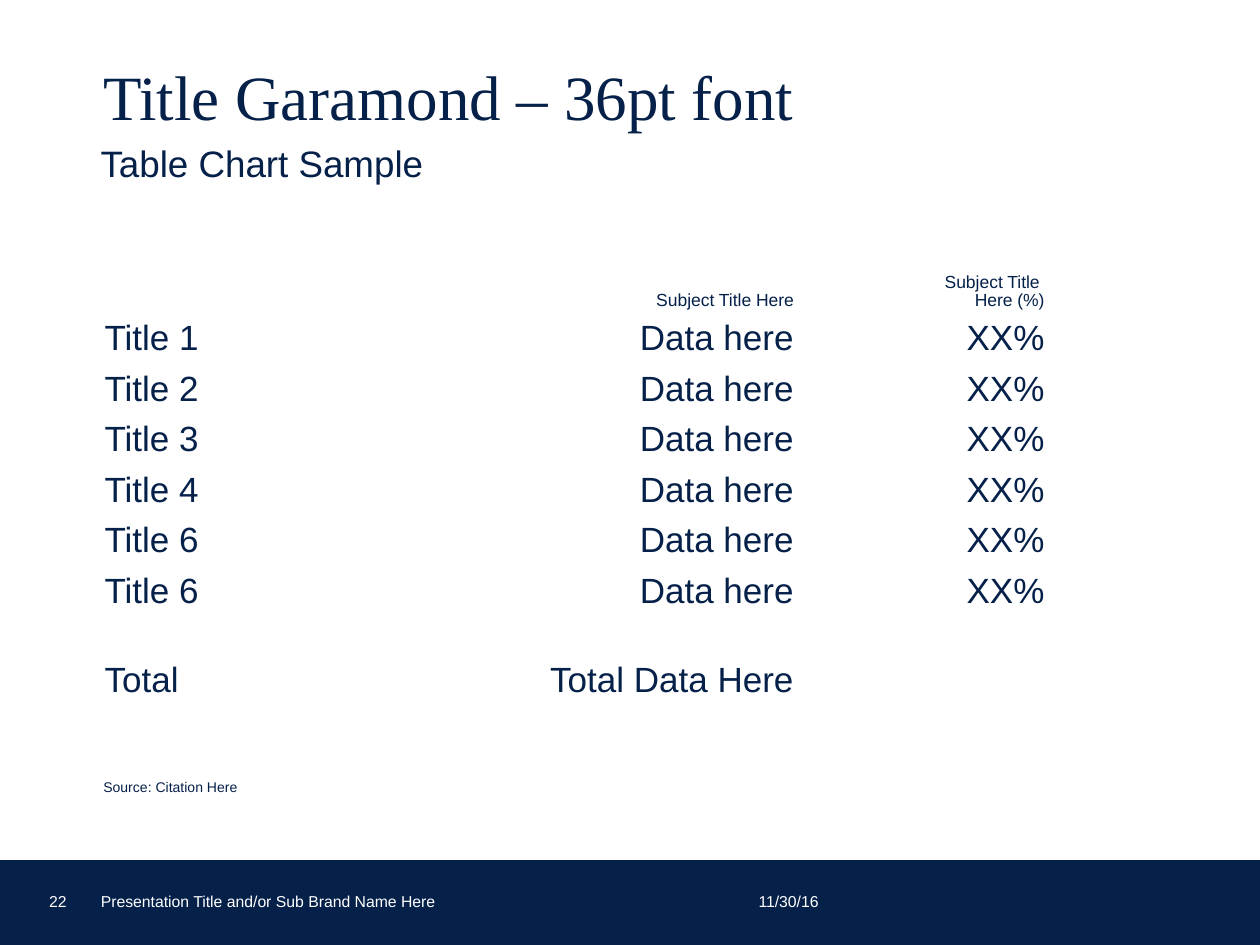
from pptx import Presentation
from pptx.dml.color import RGBColor
from pptx.enum.shapes import MSO_SHAPE
from pptx.enum.text import MSO_ANCHOR, PP_ALIGN
from pptx.util import Inches, Pt

THEME = {
    "navy": RGBColor(0x05, 0x20, 0x49),
    "white": RGBColor(0xFF, 0xFF, 0xFF),
    "serif": "Times New Roman",
    "sans": "Arial",
    "title": 36, "subtitle": 21, "body": 20, "header": 10, "footer": 9, "source": 8,
}

TITLE = "Title Garamond – 36pt font"
SUBTITLE = "Table Chart Sample"
SOURCE = "Source: Citation Here"
FOOTER = [  # text, left, top, width, height
    ("Presentation Title and/or Sub Brand Name Here", 0.8, 7.08, 4.71, 0.15),
    ("22", 0.39, 7.06, 0.27, 0.17),
    ("11/30/16", 6.02, 7.06, 1.01, 0.17),
]

HEADER = ("", "Subject Title Here", "Subject Title \vHere (%)")
ROW_TITLES = ["Title 1", "Title 2", "Title 3", "Title 4", "Title 6", "Title 6"]
TOTAL = ("Total", "Total Data Here", "")
ROWS = [HEADER, *((name, "Data here", "XX%") for name in ROW_TITLES), TOTAL]
COL_WIDTHS = (3.03, 2.64, 1.99)
ROW_HEIGHT, TOTAL_HEIGHT = 0.38, 0.69
CELL_MARGIN, TOTAL_MARGIN = 0.05, 0.36


def format_text(tf, size, color="navy", font="sans", spacing=0.9, align=PP_ALIGN.LEFT):
    for p in tf.paragraphs:
        p.alignment = align
        p.line_spacing = spacing
        p.font.size = Pt(THEME[size])
        for r in p.runs:
            r.font.name = THEME[font]
            r.font.size = Pt(THEME[size])
            r.font.color.rgb = THEME[color]


def add_text(slide, text, box, size, anchor=MSO_ANCHOR.TOP, inset=True, **style):
    tf = slide.shapes.add_textbox(*map(Inches, box)).text_frame
    tf.word_wrap = True
    tf.vertical_anchor = anchor
    if not inset:
        tf.margin_left = tf.margin_right = tf.margin_top = tf.margin_bottom = 0
    tf.text = text
    format_text(tf, size, **style)


def add_data_table(slide, left, top):
    heights = [ROW_HEIGHT] * (len(ROWS) - 1) + [TOTAL_HEIGHT]
    table = slide.shapes.add_table(
        len(ROWS), len(COL_WIDTHS), Inches(left), Inches(top),
        Inches(sum(COL_WIDTHS)), Inches(sum(heights))).table
    table.first_row = table.horz_banding = False
    for col, width in zip(table.columns, COL_WIDTHS):
        col.width = Inches(width)
    for row, height, values in zip(table.rows, heights, ROWS):
        row.height = Inches(height)
        for i, (cell, value) in enumerate(zip(row.cells, values)):
            cell.fill.background()
            cell.margin_top = Inches(TOTAL_MARGIN if values is TOTAL else CELL_MARGIN)
            cell.margin_bottom = Inches(CELL_MARGIN)
            cell.vertical_anchor = MSO_ANCHOR.BOTTOM if values is HEADER else MSO_ANCHOR.TOP
            cell.text_frame.text = value
            format_text(cell.text_frame, "header" if values is HEADER else "body",
                        align=PP_ALIGN.RIGHT if i else PP_ALIGN.LEFT)


def main():
    prs = Presentation()
    prs.slide_width, prs.slide_height = Inches(10), Inches(7.5)
    slide = prs.slides.add_slide(prs.slide_layouts[6])

    band = slide.shapes.add_shape(
        MSO_SHAPE.RECTANGLE, 0, Inches(6.84), Inches(10), Inches(0.66))
    band.shadow.inherit = False
    band.fill.solid()
    band.fill.fore_color.rgb = THEME["navy"]
    band.line.color.rgb = THEME["navy"]
    band.line.width = Pt(1.5)

    add_text(slide, TITLE, (0.72, 0.48, 8.84, 0.63), "title",
             anchor=MSO_ANCHOR.BOTTOM, font="serif", spacing=0.85)
    add_text(slide, SUBTITLE, (0.7, 1.11, 8.83, 0.42), "subtitle")
    add_data_table(slide, 0.73, 2.11)
    add_text(slide, SOURCE, (0.82, 6.19, 1.66, 0.12), "source", inset=False)
    for text, *box in FOOTER:
        add_text(slide, text, box, "footer", anchor=MSO_ANCHOR.BOTTOM,
                 inset=False, color="white", spacing=1.0)

    prs.save("out.pptx")


if __name__ == "__main__":
    main()
